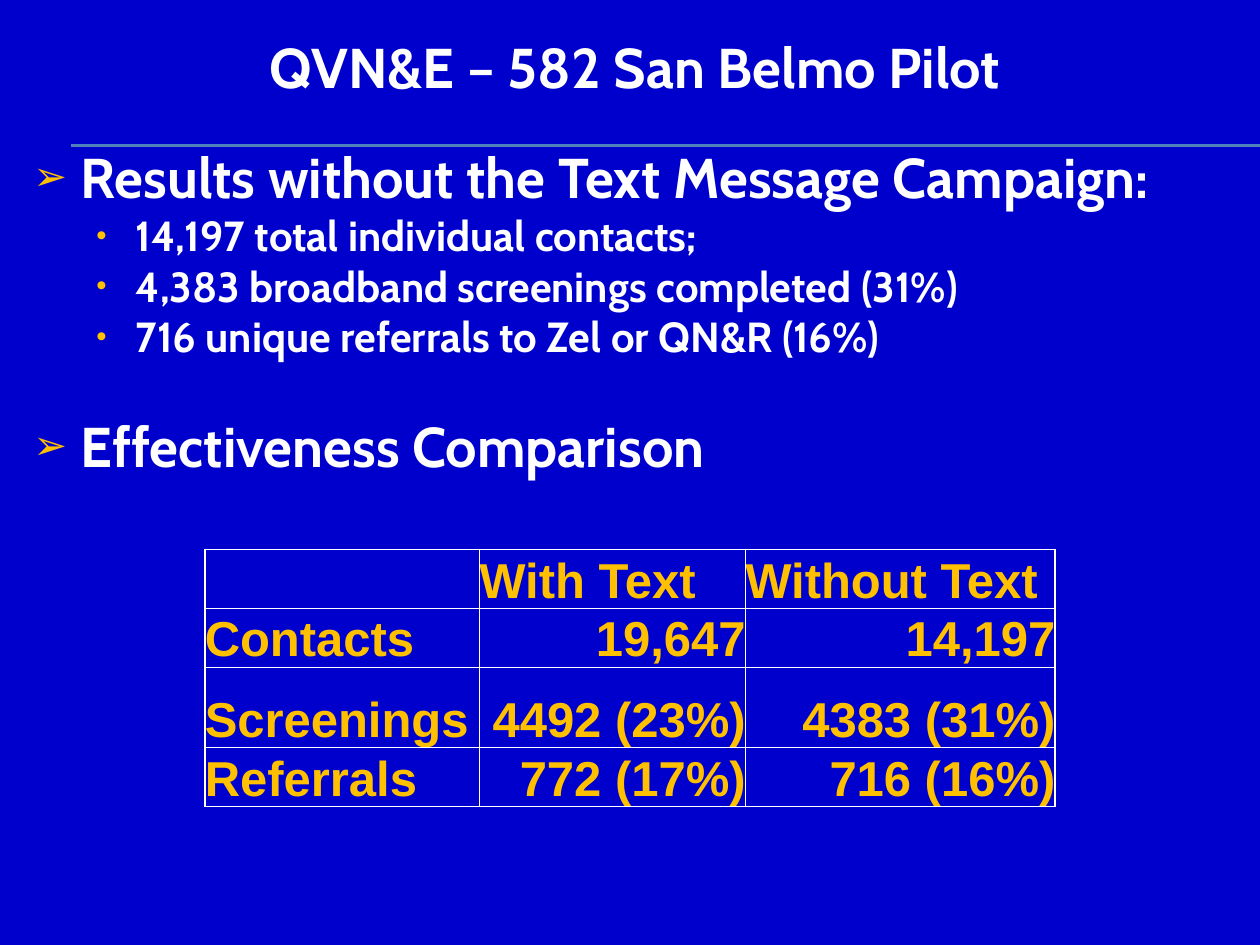
"""Build the pilot results slide with a bullet list and a comparison table."""
from lxml import etree
from pptx import Presentation
from pptx.dml.color import RGBColor
from pptx.enum.shapes import MSO_CONNECTOR
from pptx.enum.text import MSO_ANCHOR, PP_ALIGN
from pptx.oxml.ns import qn
from pptx.util import Pt

STRAIGHT = MSO_CONNECTOR.STRAIGHT
TOP, MIDDLE, BOTTOM = MSO_ANCHOR.TOP, MSO_ANCHOR.MIDDLE, MSO_ANCHOR.BOTTOM
LEFT, CENTER, RIGHT = PP_ALIGN.LEFT, PP_ALIGN.CENTER, PP_ALIGN.RIGHT

BLUE = RGBColor(0x00, 0x00, 0xCC)
RULE = RGBColor(0x4F, 0x81, 0xBD)
WHITE = RGBColor(0xFF, 0xFF, 0xFF)
GOLD = RGBColor(0xFF, 0xC0, 0x00)

HEADING = {"name": "Cabin", "size": Pt(32), "bold": True}
DETAIL = {**HEADING, "size": Pt(24)}
CELL = {"name": "Arial", "size": Pt(28), "bold": True}

LEVELS = [
    {"font": HEADING, "char": "➢", "percent": 72, "margin": 27, "hang": 27},
    {"font": DETAIL, "char": "•", "percent": 70, "margin": 58.5, "hang": 22.5},
]
BULLETS = [
    (0, "Results without the Text Message Campaign:", 0),
    (1, "14,197 total individual contacts;", 0),
    (1, "4,383 broadband screenings completed (31%)", 0),
    (1, "716 unique referrals to Zel or QN&R (16%)", 0),
    (0, "Effectiveness Comparison", 29),
]
COLUMNS = [157, 152, 177]
ROWS = [31.5, 31.5, 46, 31.5]
TABLE = [
    ["", "With Text", "Without Text"],
    ["Contacts", "19,647", "14,197"],
    ["Screenings", "4492 (23%)", "4383 (31%)"],
    ["Referrals", "772 (17%)", "716 (16%)"],
]


def set_attributes(target, values):
    """Set each named value on the target."""
    for name, value in values.items():
        setattr(target, name, value)


def add_run(p, text, font, color):
    """Add a formatted run to a paragraph."""
    r = p.add_run()
    r.text = text
    set_attributes(r.font, font)
    r.font.color.rgb = color


def add_text_box(s, left, top, width, height, anchor):
    """Add a wrapping text box and return its text frame."""
    sp = s.shapes.add_textbox(Pt(left), Pt(top), Pt(width), Pt(height))
    set_attributes(sp.text_frame, {"word_wrap": True, "vertical_anchor": anchor})
    return sp.text_frame


def add_rule(s, y):
    """Draw a thin horizontal rule to the right edge of the slide."""
    line = s.shapes.add_connector(STRAIGHT, Pt(40.5), Pt(y), Pt(720), Pt(y))
    line.line.color.rgb = RULE
    line.line.width = Pt(0.75)
    etree.SubElement(line._element.spPr, qn("a:effectLst"))


def add_title(s, text):
    """Add the centred slide title."""
    tf = add_text_box(s, 18, -18, 690, 150, MIDDLE)
    tf.margin_bottom = Pt(42.5)
    p = tf.paragraphs[0]
    p.alignment = CENTER
    add_run(p, text, HEADING, WHITE)


def set_bullet(p, level):
    """Give a paragraph the indent and gold bullet of its level."""
    pPr = p._p.get_or_add_pPr()
    pPr.set("marL", str(Pt(level["margin"])))
    pPr.set("indent", str(-Pt(level["hang"])))
    color = etree.SubElement(pPr, qn("a:buClr"))
    etree.SubElement(color, qn("a:srgbClr"), val=str(GOLD))
    etree.SubElement(pPr, qn("a:buSzPct"), val=str(level["percent"] * 1000))
    etree.SubElement(pPr, qn("a:buFont"), typeface="Arial")
    etree.SubElement(pPr, qn("a:buChar"), char=level["char"])


def add_bullets(s, bullets):
    """Add the two-level bullet list."""
    tf = add_text_box(s, 12, 78, 708, 408, TOP)
    for i, (depth, text, gap) in enumerate(bullets):
        p = tf.add_paragraph() if i else tf.paragraphs[0]
        set_bullet(p, LEVELS[depth])
        p.level = depth
        if gap:
            p.space_before = Pt(gap)
        add_run(p, text, LEVELS[depth]["font"], WHITE)


def set_borders(cell):
    """Draw a white line on each side of a cell."""
    tcPr = cell._tc.get_or_add_tcPr()
    for side in ("a:lnL", "a:lnR", "a:lnT", "a:lnB"):
        ln = etree.SubElement(tcPr, qn(side), w=str(Pt(1)))
        fill = etree.SubElement(ln, qn("a:solidFill"))
        etree.SubElement(fill, qn("a:srgbClr"), val=str(WHITE))


def format_cell(cell, text, alignment):
    """Fill in one table cell."""
    set_borders(cell)
    cell.fill.background()
    set_attributes(cell, {
        "margin_left": 0, "margin_right": 0, "margin_top": 0,
        "margin_bottom": 0, "vertical_anchor": BOTTOM,
    })
    p = cell.text_frame.paragraphs[0]
    p.alignment = alignment
    if text:
        add_run(p, text, CELL, GOLD)


def add_comparison(s, values):
    """Add the table that compares the two campaigns."""
    table = s.shapes.add_table(
        len(ROWS), len(COLUMNS), Pt(117), Pt(314), Pt(sum(COLUMNS)), Pt(sum(ROWS))
    ).table
    set_attributes(table, {"first_row": False, "horz_banding": False})
    for column, width in zip(table.columns, COLUMNS):
        column.width = Pt(width)
    for row, height in zip(table.rows, ROWS):
        row.height = Pt(height)
    for i, row in enumerate(values):
        for j, text in enumerate(row):
            format_cell(table.cell(i, j), text, RIGHT if i and j else LEFT)


def main():
    """Build and save the slide."""
    prs = Presentation()
    set_attributes(prs, {"slide_width": Pt(720), "slide_height": Pt(540)})
    s = prs.slides.add_slide(prs.slide_layouts[6])
    s.background.fill.solid()
    s.background.fill.fore_color.rgb = BLUE
    for y in (82.8, 83.5):
        add_rule(s, y)
    add_title(s, "QVN&E – 582 San Belmo Pilot")
    add_bullets(s, BULLETS)
    add_comparison(s, TABLE)
    prs.save("out.pptx")


if __name__ == "__main__":
    main()
